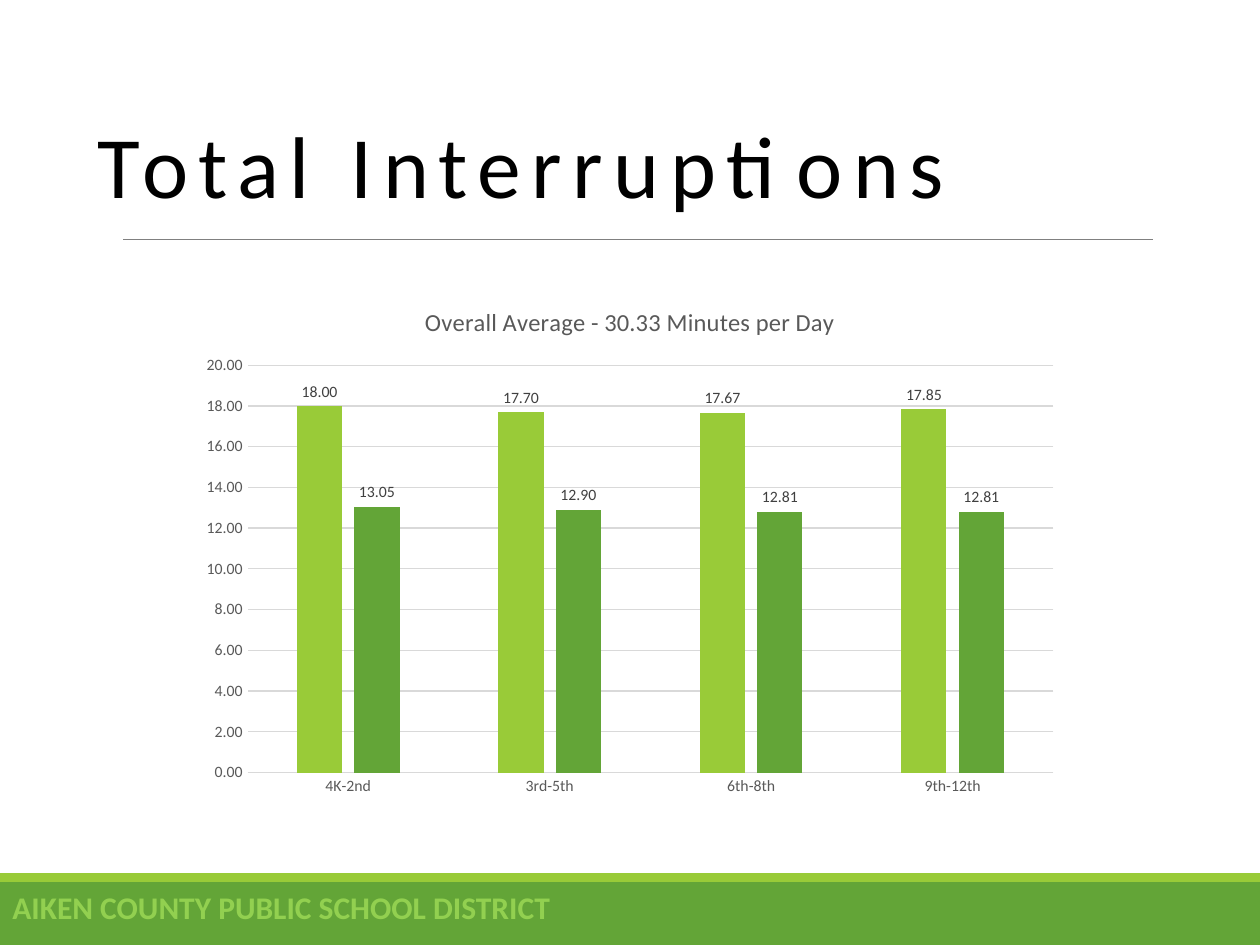
from lxml import etree
from pptx import Presentation
from pptx.chart.data import CategoryChartData
from pptx.dml.color import RGBColor
from pptx.enum.chart import XL_CHART_TYPE, XL_LABEL_POSITION, XL_TICK_MARK
from pptx.enum.shapes import MSO_CONNECTOR, MSO_SHAPE
from pptx.enum.text import MSO_ANCHOR, MSO_AUTO_SIZE, PP_ALIGN
from pptx.oxml.ns import qn
from pptx.util import Inches, Pt

COLUMNS = XL_CHART_TYPE.COLUMN_CLUSTERED
OUTSIDE_END = XL_LABEL_POSITION.OUTSIDE_END
NO_TICK = XL_TICK_MARK.NONE
STRAIGHT = MSO_CONNECTOR.STRAIGHT
RECTANGLE = MSO_SHAPE.RECTANGLE
TOP, BOTTOM = MSO_ANCHOR.TOP, MSO_ANCHOR.BOTTOM
NO_AUTOFIT = MSO_AUTO_SIZE.NONE
LEFT = PP_ALIGN.LEFT

TITLE_ONLY = 5
LIME, GREEN = "99CB38", "63A537"
GRID, AXIS_TEXT, LABEL_TEXT = "D9D9D9", "595959", "404040"
NUMBER_FORMAT = "0.00"


def color(hex_string):
    return RGBColor.from_string(hex_string)


def format_font(font, size, hex_color, bold=False):
    font.name = "Calibri"
    font.size = Pt(size)
    font.bold = bold
    font.color.rgb = color(hex_color)


def write_text(frame, text, *, size, hex_color, bold=False, anchor=TOP,
               line_spacing=None, letter_spacing=None):
    frame.word_wrap = True
    frame.auto_size = NO_AUTOFIT
    frame.vertical_anchor = anchor
    paragraph = frame.paragraphs[0]
    paragraph.alignment = LEFT
    if line_spacing:
        paragraph.line_spacing = line_spacing
    run = paragraph.add_run()
    run.text = text
    format_font(run.font, size, hex_color, bold)
    if letter_spacing:
        run._r.get_or_add_rPr().set("spc", str(letter_spacing * 100))


def format_line(line, hex_color, width):
    line.color.rgb = color(hex_color)
    line.width = Pt(width)


class SlideBuilder:
    """Holds the current slide and draws each kind of element in its style."""

    def __init__(self, slide):
        self.slide = slide
        self.shapes = slide.shapes

    def title(self, text, left, top, width, height, bottom_inset):
        title = self.shapes.title
        title.left, title.top = Inches(left), Inches(top)
        title.width, title.height = Inches(width), Inches(height)
        title.text_frame.margin_bottom = Inches(bottom_inset)
        write_text(title.text_frame, text, size=50, hex_color="000000",
                   anchor=BOTTOM, line_spacing=0.85, letter_spacing=6)

    def band(self, top, height, hex_color):
        """Draw a rectangle across the full slide width."""
        band = self.shapes.add_shape(RECTANGLE, 0, Inches(top), Inches(10), Inches(height))
        band.shadow.inherit = False
        band.fill.solid()
        band.fill.fore_color.rgb = color(hex_color)
        band.line.fill.background()

    def rule(self, left, right, y):
        rule = self.shapes.add_connector(STRAIGHT, Inches(left), Inches(y),
                                         Inches(right), Inches(y))
        format_line(rule.line, "808080", 0.5)
        etree.SubElement(rule._element.spPr, qn("a:effectLst"))

    def text(self, text, left, top, width, height, **text_format):
        box = self.shapes.add_textbox(Inches(left), Inches(top), Inches(width), Inches(height))
        write_text(box.text_frame, text, **text_format)

    def column_chart(self, heading, categories, series, left, top, width, height):
        """Draw clustered columns; series maps a name to its values and colour."""
        data = CategoryChartData(number_format=NUMBER_FORMAT)
        data.categories = categories
        for name, (values, _) in series.items():
            data.add_series(name, values)
        chart = self.shapes.add_chart(COLUMNS, Inches(left), Inches(top),
                                      Inches(width), Inches(height), data).chart
        format_font(chart.font, 10, "000000")
        chart.has_legend = False
        chart.has_title = True
        frame = chart.chart_title.text_frame
        frame.text = heading
        format_font(frame.paragraphs[0].runs[0].font, 14, AXIS_TEXT)
        chart.chart_title.include_in_layout = False

        for axis in (chart.category_axis, chart.value_axis):
            axis.major_tick_mark = axis.minor_tick_mark = NO_TICK
            format_font(axis.tick_labels.font, 9, AXIS_TEXT)
        format_line(chart.category_axis.format.line, GRID, 0.75)
        value_axis = chart.value_axis
        value_axis.format.line.fill.background()
        value_axis.minimum_scale, value_axis.maximum_scale = 0, 20
        value_axis.major_unit = 2
        value_axis.tick_labels.number_format = NUMBER_FORMAT
        value_axis.tick_labels.number_format_is_linked = False
        format_line(value_axis.major_gridlines.format.line, GRID, 0.75)

        plot = chart.plots[0]
        plot.gap_width, plot.overlap = 219, -27
        plot.vary_by_categories = False
        for columns in plot.series:
            columns.format.fill.solid()
            columns.format.fill.fore_color.rgb = color(series[columns.name][1])
            labels = columns.data_labels
            labels.show_value = True
            labels.position = OUTSIDE_END
            labels.number_format = NUMBER_FORMAT
            labels.number_format_is_linked = False
            format_font(labels.font, 9, LABEL_TEXT)


def main():
    presentation = Presentation()
    presentation.slide_width, presentation.slide_height = Inches(10), Inches(7.5)
    slide = presentation.slides.add_slide(presentation.slide_layouts[TITLE_ONLY])
    builder = SlideBuilder(slide)

    builder.band(7, 0.5, GREEN)
    builder.band(6.93, 0.07, LIME)
    builder.rule(0.98, 9.15, 1.9)
    builder.title("Total Interruptions", 0.67, 0.73, 9.33, 2.1, bottom_inset=1.11)
    builder.text("AIKEN COUNTY PUBLIC SCHOOL DISTRICT", 0, 7, 10, 0.4,
                 size=18, hex_color="92D050", bold=True)
    builder.column_chart(
        "Overall Average - 30.33 Minutes per Day",
        ["4K-2nd", "3rd-5th", "6th-8th", "9th-12th"],
        {"Series 1": ([18, 17.7, 17.67, 17.85], LIME),
         "Series 2": ([13.05, 12.9, 12.81, 12.81], GREEN)},
        1.5, 2.25, 7, 4.15)

    presentation.save("out.pptx")


if __name__ == "__main__":
    main()
